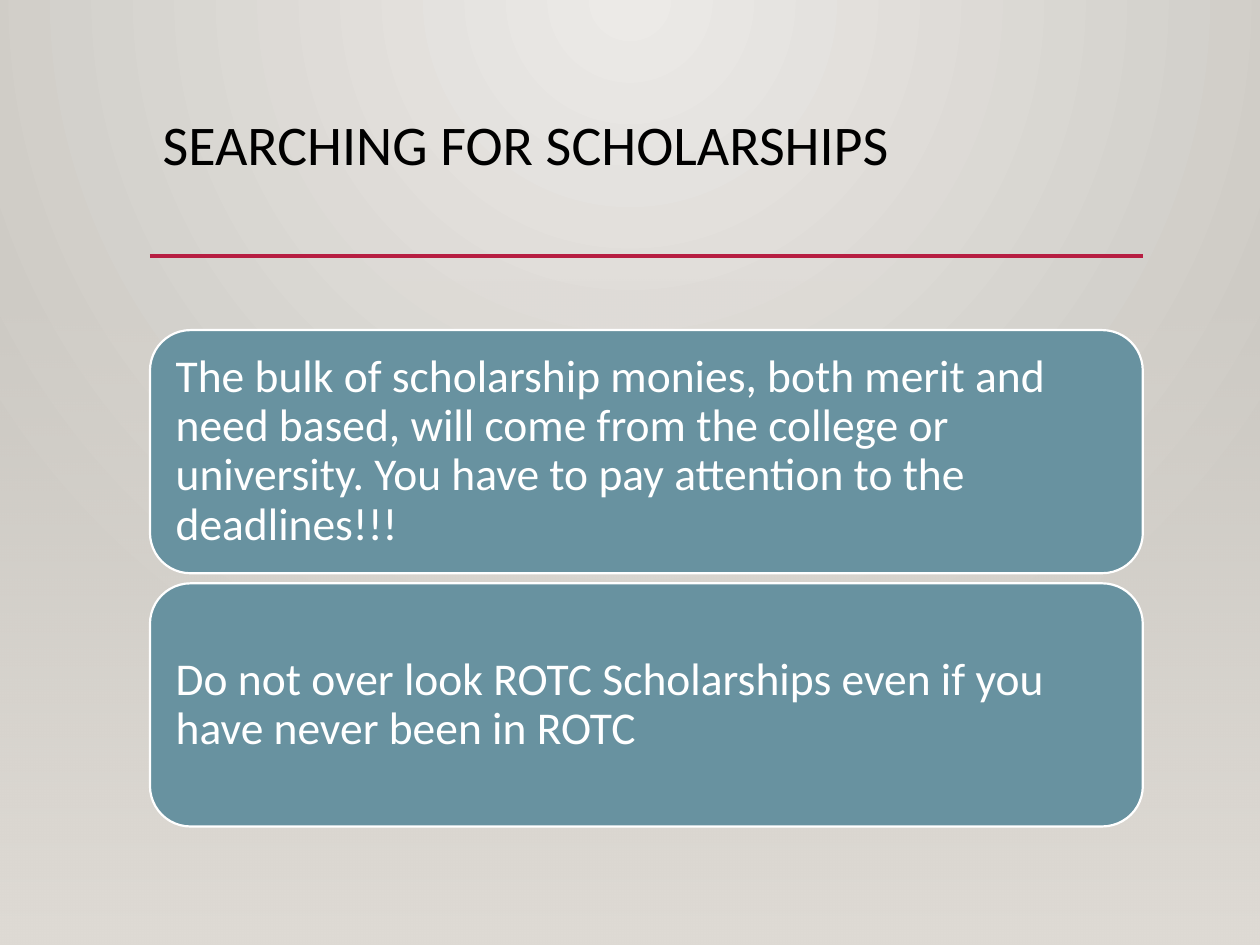
from dataclasses import dataclass

from lxml import etree
from pptx import Presentation
from pptx.dml.color import RGBColor
from pptx.enum.shapes import MSO_CONNECTOR, MSO_SHAPE
from pptx.enum.text import MSO_ANCHOR, PP_ALIGN
from pptx.oxml import parse_xml
from pptx.oxml.ns import nsdecls, qn
from pptx.util import Inches, Pt

LINE = MSO_CONNECTOR.STRAIGHT
RECT, ROUNDED = MSO_SHAPE.RECTANGLE, MSO_SHAPE.ROUNDED_RECTANGLE
TOP, MIDDLE, LEFT = MSO_ANCHOR.TOP, MSO_ANCHOR.MIDDLE, PP_ALIGN.LEFT


@dataclass(frozen=True)
class Theme:
    font: str = "Calibri"
    title_size: int = 32
    body_size: int = 26
    title: str = "000000"
    accent: str = "B71E42"
    card: str = "6892A0"
    light: str = "FFFFFF"
    glow: str = "ECEAE7"
    edge: str = "CAC7C1"
    floor: str = "DFDBD5"


THEME = Theme()
WIDTH, HEIGHT = Inches(10), Inches(7.5)
MARGIN, CONTENT_WIDTH = Inches(1.19), Inches(7.88)
CARD_GAP = Inches(0.08)
CARDS = [
    "The bulk of scholarship monies, both merit and need based, will come from "
    "the college or university. You have to pay attention to the deadlines!!!",
    "Do not over look ROTC Scholarships even if you have never been in ROTC",
]


def rgb(value):
    return RGBColor.from_string(value)


def set_gradient(element, start, end, shading, start_alpha=100):
    """Swap the default gradient inside element for a two-stop one."""
    old = next(element.iter(qn("a:gradFill")))
    new = parse_xml(
        f'<a:gradFill {nsdecls("a")} rotWithShape="1"><a:gsLst>'
        f'<a:gs pos="0"><a:srgbClr val="{start}">'
        f'<a:alpha val="{start_alpha * 1000}"/></a:srgbClr></a:gs>'
        f'<a:gs pos="100000"><a:srgbClr val="{end}"/></a:gs>'
        f'</a:gsLst>{shading}</a:gradFill>')
    old.getparent().replace(old, new)


def style_text(tf, text, size, color, anchor):
    tf.word_wrap = True
    tf.vertical_anchor = anchor
    p = tf.paragraphs[0]
    p.text = text
    p.alignment = LEFT
    p.line_spacing = 0.9
    p.font.name = THEME.font
    p.font.size = Pt(size)
    p.font.color.rgb = rgb(color)


def add_backdrop(s, floor_top):
    # Round glow from the top centre
    s.background.fill.gradient()
    set_gradient(s.element, THEME.glow, THEME.edge,
                 '<a:path path="circle"><a:fillToRect l="43000" t="0" '
                 'r="43000" b="100000"/></a:path>')
    # Floor that fades in towards the bottom edge
    sp = s.shapes.add_shape(RECT, 0, floor_top, WIDTH, HEIGHT - floor_top)
    sp.shadow.inherit = False
    sp.line.fill.background()
    sp.fill.gradient()
    set_gradient(sp.element, THEME.floor, THEME.floor,
                 '<a:lin ang="5400000" scaled="0"/>', start_alpha=0)


def add_heading(s, text, left, top, width, height):
    title = s.shapes.title
    title.left, title.top, title.width, title.height = left, top, width, height
    style_text(title.text_frame, text, THEME.title_size, THEME.title, TOP)
    # Rule under the title
    y = top + height
    rule = s.shapes.add_connector(LINE, left, y, left + width, y)
    rule.line.color.rgb = rgb(THEME.accent)
    rule.line.width = Pt(2.5)
    etree.SubElement(rule.element.spPr, qn("a:effectLst"))


def add_cards(s, texts, left, top, width, height):
    card_height = (height - CARD_GAP * (len(texts) - 1)) // len(texts)
    for i, text in enumerate(texts):
        sp = s.shapes.add_shape(ROUNDED, left, top + i * (card_height + CARD_GAP),
                                width, card_height)
        sp.shadow.inherit = False
        sp.fill.solid()
        sp.fill.fore_color.rgb = rgb(THEME.card)
        sp.line.color.rgb = rgb(THEME.light)
        sp.line.width = Pt(1.25)
        tf = sp.text_frame
        tf.margin_left = tf.margin_right = Inches(0.11)
        tf.margin_top = tf.margin_bottom = Inches(0.11)
        style_text(tf, text, THEME.body_size, THEME.light, MIDDLE)


def main():
    prs = Presentation()
    prs.slide_width, prs.slide_height = WIDTH, HEIGHT
    s = prs.slides.add_slide(prs.slide_layouts.get_by_name("Title Only"))
    add_backdrop(s, Inches(2.21))
    add_heading(s, "SEARCHING FOR SCHOLARSHIPS",
                MARGIN, Inches(0.88), CONTENT_WIDTH, Inches(1.15))
    add_cards(s, CARDS, MARGIN, Inches(2.62), CONTENT_WIDTH, Inches(3.94))
    prs.save("out.pptx")


if __name__ == "__main__":
    main()
